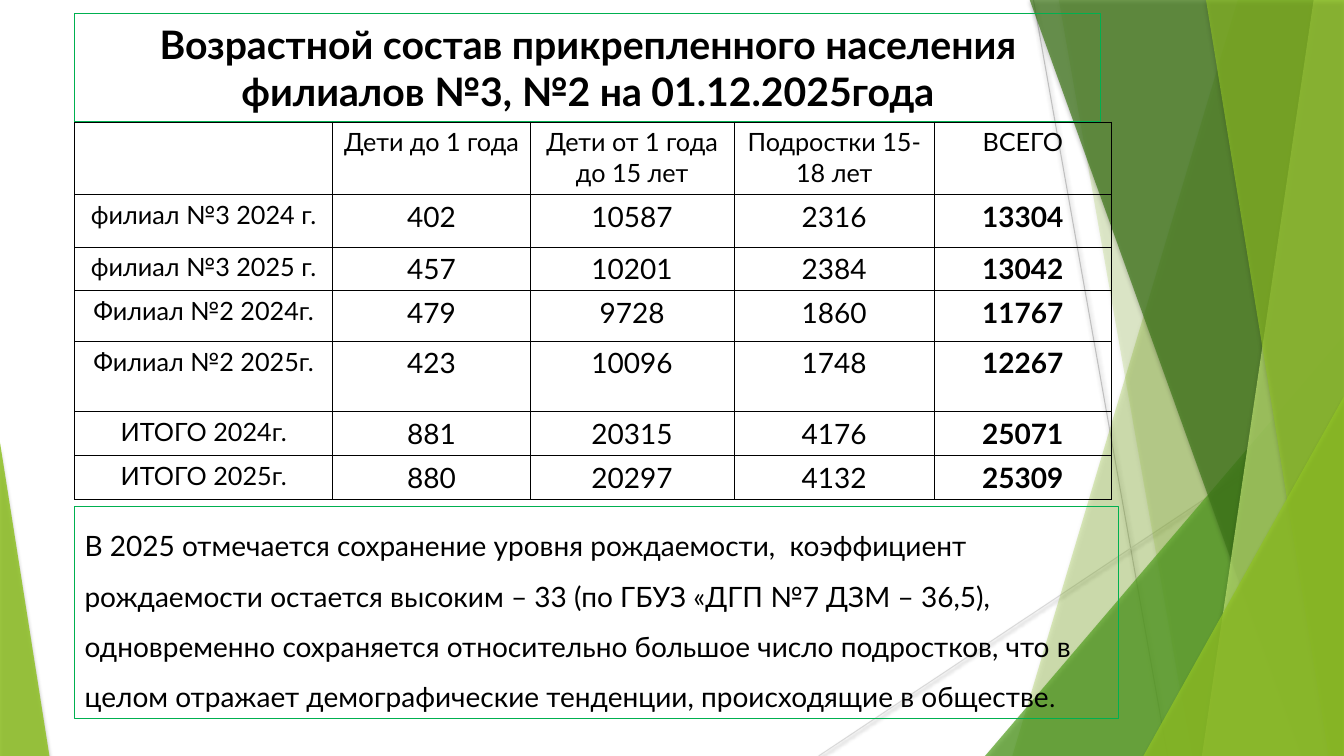
from typing import NamedTuple

from lxml import etree
from pptx import Presentation
from pptx.dml.color import RGBColor as Rgb
from pptx.enum.shapes import MSO_CONNECTOR as Link, MSO_SHAPE as Kind
from pptx.enum.text import MSO_ANCHOR as Anchor, MSO_AUTO_SIZE as Fit, PP_ALIGN as Align
from pptx.oxml.ns import qn
from pptx.util import Inches, Pt

WIDE, HIGH, TOP = 13.33, 7.5, -0.01
LEFT = 0.74
GREEN = "00B050"


class Ray(NamedTuple):
    start: tuple[float, float]
    end: tuple[float, float]
    tint: str


class Facet(NamedTuple):
    """Band from the top edge to the bottom edge, closed by the right side."""
    top: float
    foot: float
    tint: str
    alpha: int


class Wedge(NamedTuple):
    box: tuple[float, float, float, float]
    apex: float
    tint: str
    alpha: int


RAYS = [
    Ray((10.25, 0), (11.58, HIGH), "BFBFBF"),
    Ray((WIDE, 4.03), (8.12, HIGH), "D9D9D9"),
]
DECOR = [
    Facet(12.28, 10.04, "90C226", 30),
    Facet(10.5, 11.82, "90C226", 20),
    Wedge((9.77, 3.33, 3.56, 4.17), 1, "54A021", 72),
    Facet(10.21, 12.91, "3F7819", 70),
    Facet(13.03, 11.92, "C0E474", 70),
    Facet(11.96, 13.18, "90C226", 65),
    Wedge((11.34, 3.93, 1.99, 3.57), 1, "90C226", 80),
    Wedge((0, 4.39, 0.49, 3.11), 0, "90C226", 85),
]
COLS = [2.56, 1.96, 2.02, 1.99, 1.75]
ROWS = [0.72, 0.52, 0.41, 0.5, 0.7, 0.42, 0.43]
CELLS = [
    ["", "Дети до 1 года", "Дети от 1 года до 15 лет", "Подростки 15-18 лет", "ВСЕГО"],
    ["филиал №3 2024 г.", "402", "10587", "2316", "13304"],
    ["филиал №3 2025 г.", "457", "10201", "2384", "13042"],
    ["Филиал №2 2024г.", "479", "9728", "1860", "11767"],
    ["Филиал №2 2025г.", "423", "10096", "1748", "12267"],
    ["ИТОГО 2024г.", "881", "20315", "4176", "25071"],
    ["ИТОГО 2025г.", "880", "20297", "4132", "25309"],
]
TITLE = "Возрастной состав прикрепленного населения филиалов №3, №2 на 01.12.2025года"
NOTE = ("В 2025 отмечается сохранение уровня рождаемости,  коэффициент рождаемости "
        "остается высоким – 33 (по ГБУЗ «ДГП №7 ДЗМ – 36,5), одновременно сохраняется "
        "относительно большое число подростков, что в целом отражает демографические "
        "тенденции, происходящие в обществе")


def hue(code: str) -> Rgb:
    return Rgb.from_string(code)


def apply(target, values: dict) -> None:
    for name, value in values.items():
        setattr(target, name, value)


def style(font, size: float, bold: bool = False) -> None:
    apply(font, {"name": "Lato", "size": Pt(size), "bold": bold})
    font.color.rgb = hue("000000")


def shade(shape, blur: float, dist: float, alpha: int) -> None:
    effects = etree.SubElement(shape.element.spPr, qn("a:effectLst"))
    outer = etree.SubElement(effects, qn("a:outerShdw"), blurRad=str(Pt(blur)),
                             dist=str(Pt(dist)), dir="5400000", rotWithShape="0")
    black = etree.SubElement(outer, qn("a:srgbClr"), val="000000")
    etree.SubElement(black, qn("a:alpha"), val=str(alpha * 1000))


def draw_ray(slide, ray: Ray) -> None:
    ends = [Inches(v) for v in ray.start + ray.end]
    line = slide.shapes.add_connector(Link.STRAIGHT, *ends)
    line.line.color.rgb = hue(ray.tint)
    line.line.width = Pt(0.75)
    shade(line, 3.1, 1.6, 38)


def draw_decor(slide, part: Facet | Wedge) -> None:
    if isinstance(part, Facet):
        points = [(part.top, TOP), (WIDE, TOP), (WIDE, HIGH), (part.foot, HIGH)]
        first, *rest = [(Inches(x), Inches(y)) for x, y in points]
        pen = slide.shapes.build_freeform(*first)
        pen.add_line_segments(rest, close=True)
        shape = pen.convert_to_shape()
    else:
        shape = slide.shapes.add_shape(Kind.ISOSCELES_TRIANGLE, *map(Inches, part.box))
        shape.adjustments[0] = part.apex
    shape.fill.solid()
    shape.fill.fore_color.rgb = hue(part.tint)
    tint = shape.element.spPr.find(".//" + qn("a:srgbClr"))
    etree.SubElement(tint, qn("a:alpha"), val=str(part.alpha * 1000))
    shape.line.fill.background()
    shade(shape, 3, 2, 35)


def frame(shape, anchor: Anchor, align: Align):
    """Give a box its thin green outline and return its first paragraph."""
    shape.fill.background()
    shape.line.color.rgb = hue(GREEN)
    shape.line.width = Pt(0)
    shape.shadow.inherit = False
    apply(shape.text_frame, {"word_wrap": True, "auto_size": Fit.NONE,
                             "vertical_anchor": anchor})
    para = shape.text_frame.paragraphs[0]
    para.alignment = align
    return para


def add_run(para, text: str, size: float, bold: bool = False) -> None:
    run = para.add_run()
    run.text = text
    style(run.font, size, bold)


def border(cell) -> None:
    props = cell._tc.get_or_add_tcPr()
    for spot, side in enumerate(("lnL", "lnR", "lnT", "lnB")):
        line = etree.Element(qn("a:" + side), w=str(Pt(0.5)))
        fill = etree.SubElement(line, qn("a:solidFill"))
        etree.SubElement(fill, qn("a:srgbClr"), val="000000")
        props.insert(spot, line)


def draw_table(slide) -> None:
    box = map(Inches, (LEFT, 1.21, sum(COLS), sum(ROWS)))
    table = slide.shapes.add_table(len(ROWS), len(COLS), *box).table
    apply(table, {"first_row": False, "horz_banding": False})
    for col, width in zip(table.columns, COLS):
        col.width = Inches(width)
    for row, height in zip(table.rows, ROWS):
        row.height = Inches(height)
    for r, line in enumerate(CELLS):
        for c, text in enumerate(line):
            cell = table.cell(r, c)
            apply(cell, {"margin_left": Inches(0.01), "margin_right": Inches(0.01)})
            cell.fill.background()
            border(cell)
            para = cell.text_frame.paragraphs[0]
            para.alignment = Align.CENTER
            if text:
                add_run(para, text, 20 if r and c else 18, bool(r) and c == len(COLS) - 1)


def main() -> None:
    deck = Presentation()
    apply(deck, {"slide_width": Inches(WIDE), "slide_height": Inches(HIGH)})
    slide = deck.slides.add_slide(deck.slide_layouts[5])

    # Green backdrop
    for ray in RAYS:
        draw_ray(slide, ray)
    for part in DECOR:
        draw_decor(slide, part)

    # Title, raised above the backdrop
    title = slide.shapes.title
    apply(title, {"left": Inches(LEFT), "top": Inches(0.13),
                  "width": Inches(10.18), "height": Inches(1.08)})
    add_run(frame(title, Anchor.MIDDLE, Align.CENTER), TITLE, 28, True)
    title.element.getparent().append(title.element)

    # Age table
    draw_table(slide)

    # Summary
    note = slide.shapes.add_shape(Kind.RECTANGLE, *map(Inches, (LEFT, 5.03, 10.35, 2.1)))
    para = frame(note, Anchor.TOP, Align.LEFT)
    para.line_spacing = 1.5
    add_run(para, NOTE, 20)
    add_run(para, ".", 18)

    deck.save("out.pptx")


if __name__ == "__main__":
    main()
